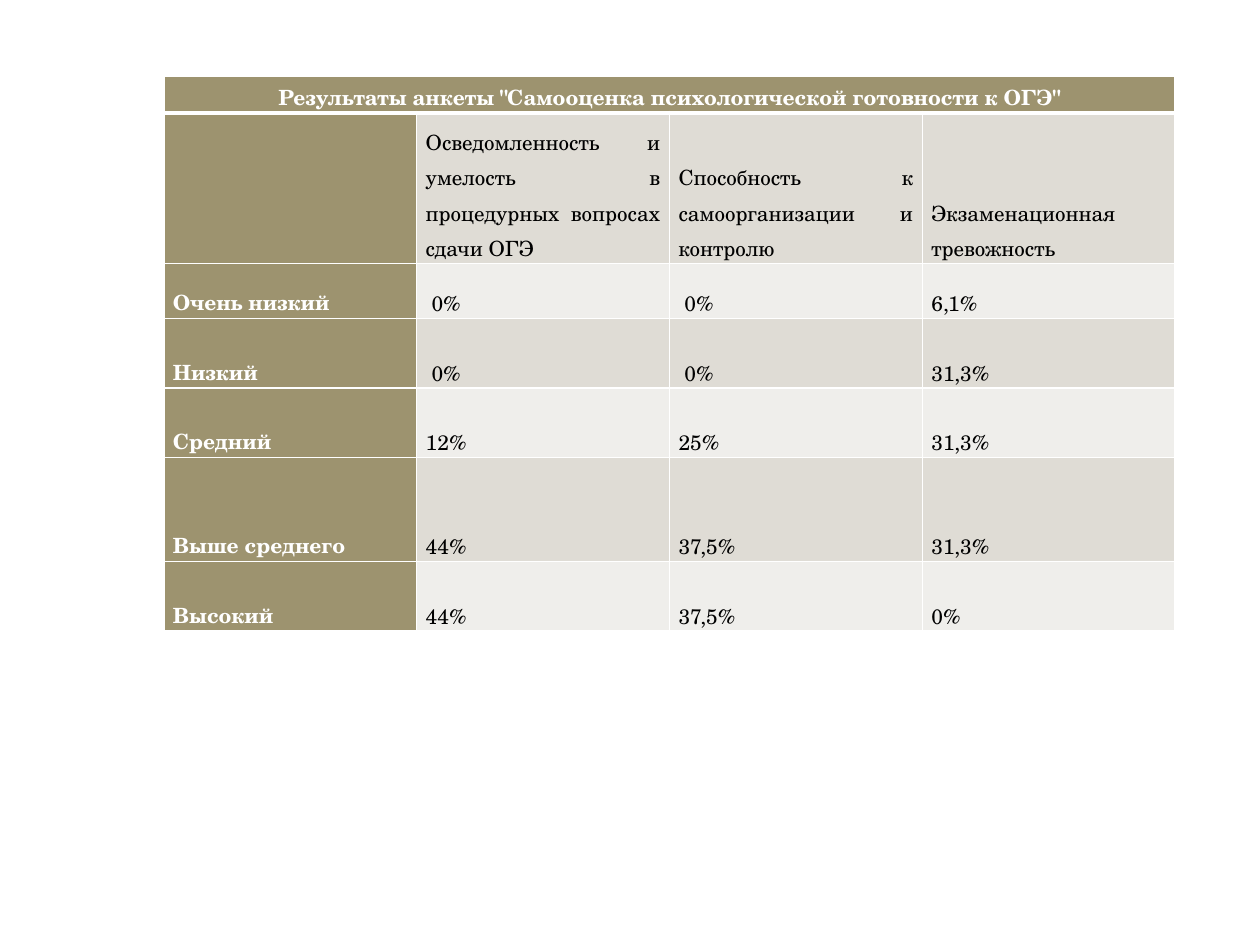
"""Build a slide with a table of exam readiness questionnaire results."""
from lxml import etree
from pptx import Presentation
from pptx.dml.color import RGBColor
from pptx.enum import text
from pptx.oxml import ns
from pptx.util import Pt

FONT = "TeX Gyre Schola"
WHITE, BLACK, OLIVE = "FFFFFF", "000000", "9D936F"
BANDS = ("DFDCD5", "EFEEEB")
TITLE = 'Результаты анкеты "Самооценка психологической готовности к ОГЭ"'
ROWS = [
    (TITLE, "", "", ""),
    ("", "Осведомленность и умелость в процедурных вопросах сдачи ОГЭ",
     "Способность к самоорганизации и контролю", "Экзаменационная тревожность"),
    ("Очень низкий", " 0%", " 0%", "6,1%"),
    ("Низкий", " 0%", " 0%", "31,3%"),
    ("Средний", "12%", "25%", "31,3%"),
    ("Выше среднего", "44%", "37,5%", "31,3%"),
    ("Высокий", "44%", "37,5%", "0%"),
]
HEIGHTS = (20.9, 86.1, 31.4, 39.7, 39.7, 59.6, 39.7)
LEFT, TOP, COLUMN = 93.6, 43.3, 144.5


def color(value):
    return RGBColor.from_string(value)


def set_borders(cell, widths):
    properties = cell._tc.get_or_add_tcPr()
    for index, (side, width) in enumerate(widths.items()):
        line = etree.Element(ns.qn(f"a:ln{side}"), w=str(Pt(width)))
        fill = etree.SubElement(line, ns.qn("a:solidFill"))
        etree.SubElement(fill, ns.qn("a:srgbClr"), val=WHITE)
        properties.insert(index, line)


def write(cell, words, heading, align):
    cell.vertical_anchor = text.MSO_ANCHOR.BOTTOM
    cell.margin_left = cell.margin_right = Pt(5.2)
    cell.margin_top = cell.margin_bottom = Pt(0)
    para = cell.text_frame.paragraphs[0]
    para.alignment = align
    para.line_spacing = 1.15
    span = para.add_run()
    span.text = words
    span.font.name = FONT
    span.font.size = Pt(12)
    span.font.bold = heading
    span.font.color.rgb = color(WHITE if heading else BLACK)


def main():
    deck = Presentation()
    deck.slide_width, deck.slide_height = Pt(720), Pt(540)
    page = deck.slides.add_slide(deck.slide_layouts[6])
    count = len(ROWS[0])
    table = page.shapes.add_table(len(ROWS), count, Pt(LEFT), Pt(TOP),
                                  Pt(COLUMN * count), Pt(sum(HEIGHTS))).table
    for column in table.columns:
        column.width = Pt(COLUMN)
    table.cell(0, 0).merge(table.cell(0, count - 1))
    for r, (row, height) in enumerate(zip(ROWS, HEIGHTS)):
        table.rows[r].height = Pt(height)
        for c, words in enumerate(row):
            cell = table.cell(r, c)
            heading = r == 0 or c == 0
            cell.fill.solid()
            cell.fill.fore_color.rgb = color(OLIVE if heading else BANDS[(r - 1) % 2])
            set_borders(cell, {"L": 1, "R": 1, "T": 3 if r == 1 else 1, "B": 3 if r == 0 else 1})
            if words:
                align = text.PP_ALIGN.JUSTIFY if r else text.PP_ALIGN.CENTER
                write(cell, words, heading, align)
    deck.save("out.pptx")


if __name__ == "__main__":
    main()
